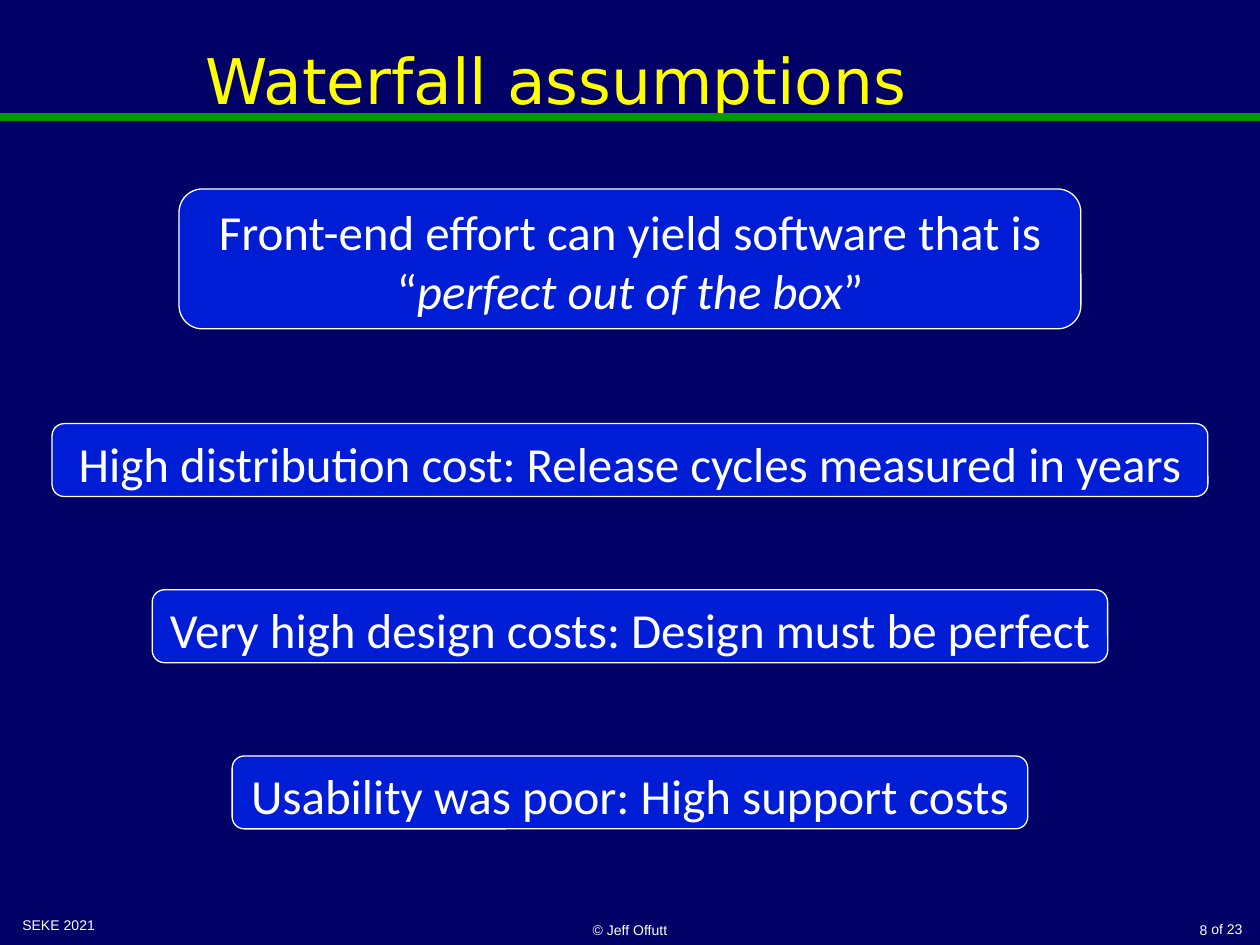
from lxml.etree import SubElement
from pptx import Presentation
from pptx.dml.color import RGBColor
from pptx.enum.shapes import MSO_CONNECTOR, MSO_SHAPE
from pptx.enum.text import MSO_ANCHOR as ANCHOR, PP_ALIGN as ALIGN
from pptx.oxml.ns import qn
from pptx.util import Cm, Pt

COLORS = {
    "background": "000066",
    "rule": "009900",
    "title": "FFFF00",
    "box": "001DD6",
    "text": "FFFFFF",
}
WIDTH, HEIGHT = 25.4, 19.05
BOX_HEIGHT = 1.47


def rgb(name):
    return RGBColor.from_string(COLORS[name])


def write(tf, *runs, size=28, font="Calibri", color="text",
          align=ALIGN.CENTER, anchor=ANCHOR.TOP):
    """Fill a text frame with one paragraph; each run is (text, italic)."""
    tf.word_wrap = True
    tf.vertical_anchor = anchor
    p = tf.paragraphs[0]
    p.alignment = align
    for text, italic in runs:
        r = p.add_run()
        r.text = text
        r.font.size = Pt(size)
        r.font.name = font
        r.font.italic = italic
        r.font.color.rgb = rgb(color)


class Deck:
    def __init__(self):
        self.prs = Presentation()
        self.prs.slide_width, self.prs.slide_height = Cm(WIDTH), Cm(HEIGHT)

    def add_slide(self):
        self.s = self.prs.slides.add_slide(self.prs.slide_layouts[5])
        fill = self.s.background.fill
        fill.solid()
        fill.fore_color.rgb = rgb("background")

    def title(self, text):
        sp = self.s.shapes.title
        sp.left, sp.top, sp.width, sp.height = Cm(0.2), Cm(0), Cm(22.02), Cm(3.18)
        write(sp.text_frame, (text, False), size=36, font="DejaVu Sans",
              color="title", anchor=ANCHOR.MIDDLE)

    def rule(self, y):
        line = self.s.shapes.add_connector(
            MSO_CONNECTOR.STRAIGHT, Cm(0), Cm(y), Cm(WIDTH), Cm(y))
        line.line.color.rgb = rgb("rule")
        line.line.width = Pt(4.5)
        SubElement(line._element.spPr, qn("a:effectLst"))

    def footer(self, text, left, top, width, align, anchor=ANCHOR.BOTTOM):
        sp = self.s.shapes.add_textbox(Cm(left), Cm(top), Cm(width), Cm(0.68))
        write(sp.text_frame, (text, False), size=8, font="Arial",
              align=align, anchor=anchor)

    def box(self, *runs, top, width, height=BOX_HEIGHT):
        """Add a rounded box centred across the slide."""
        sp = self.s.shapes.add_shape(
            MSO_SHAPE.ROUNDED_RECTANGLE,
            Cm((WIDTH - width) / 2), Cm(top), Cm(width), Cm(height))
        sp.shadow.inherit = False
        sp.fill.solid()
        sp.fill.fore_color.rgb = rgb("box")
        sp.line.color.rgb = rgb("text")
        sp.line.width = Pt(0.75)
        write(sp.text_frame, *runs)


def main():
    deck = Deck()
    deck.add_slide()
    deck.rule(2.36)
    deck.title("Waterfall assumptions")

    deck.box(("Front-end effort can yield software that is “", False),
             ("perfect out of the box", True), ("”", False),
             top=3.81, width=18.18, height=2.82)
    assumptions = [
        ("High distribution cost: Release cycles measured in years", 23.3),
        ("Very high design costs: Design must be perfect", 19.26),
        ("Usability was poor: High support costs", 16.04),
    ]
    for i, (text, width) in enumerate(assumptions):
        deck.box((text, False), top=8.54 + i * 3.35, width=width)

    deck.footer("SEKE 2021", 0.2, 18.36, 5.92, ALIGN.LEFT, ANCHOR.TOP)
    deck.footer("© Jeff Offutt", 8.68, 18.36, 8.04, ALIGN.CENTER)
    deck.footer("8", 19.99, 18.36, 4.6, ALIGN.RIGHT)
    deck.footer("of 23", 23.8, 18.44, 1.5, ALIGN.RIGHT, ANCHOR.TOP)
    deck.prs.save("out.pptx")


if __name__ == "__main__":
    main()
